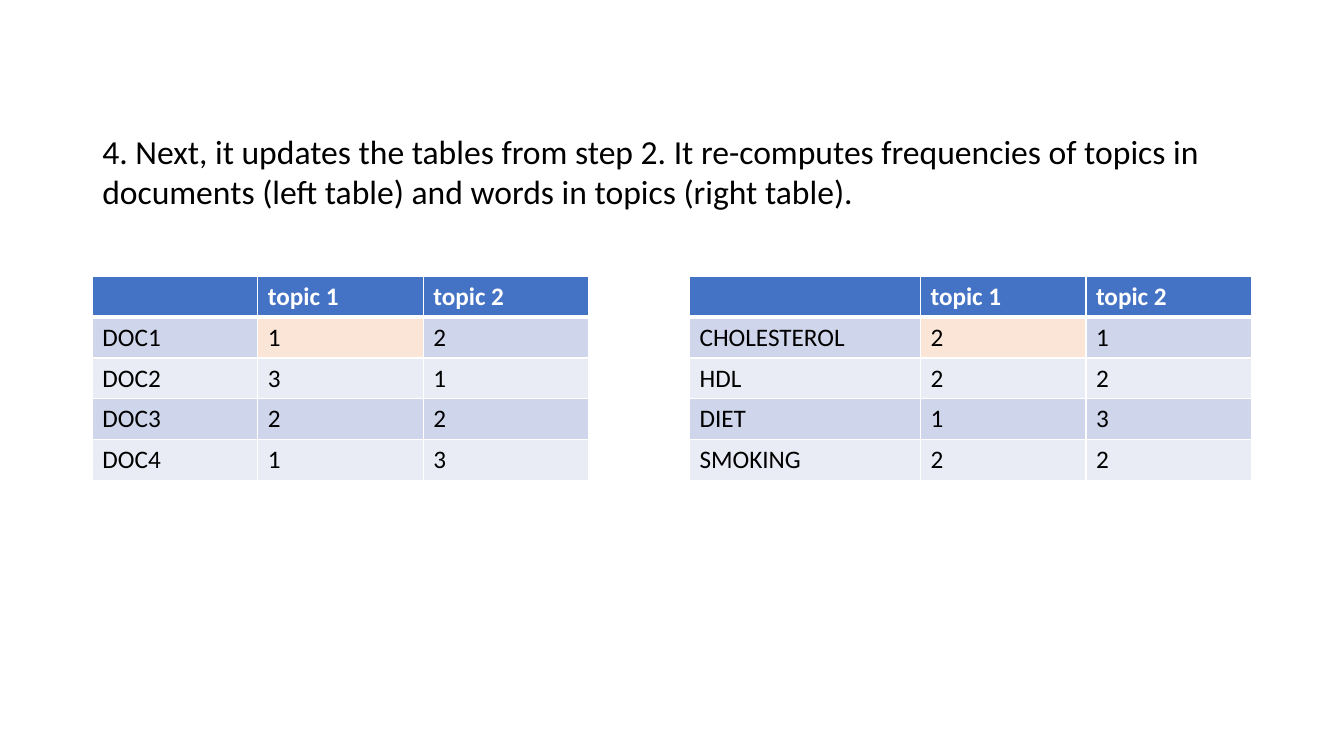
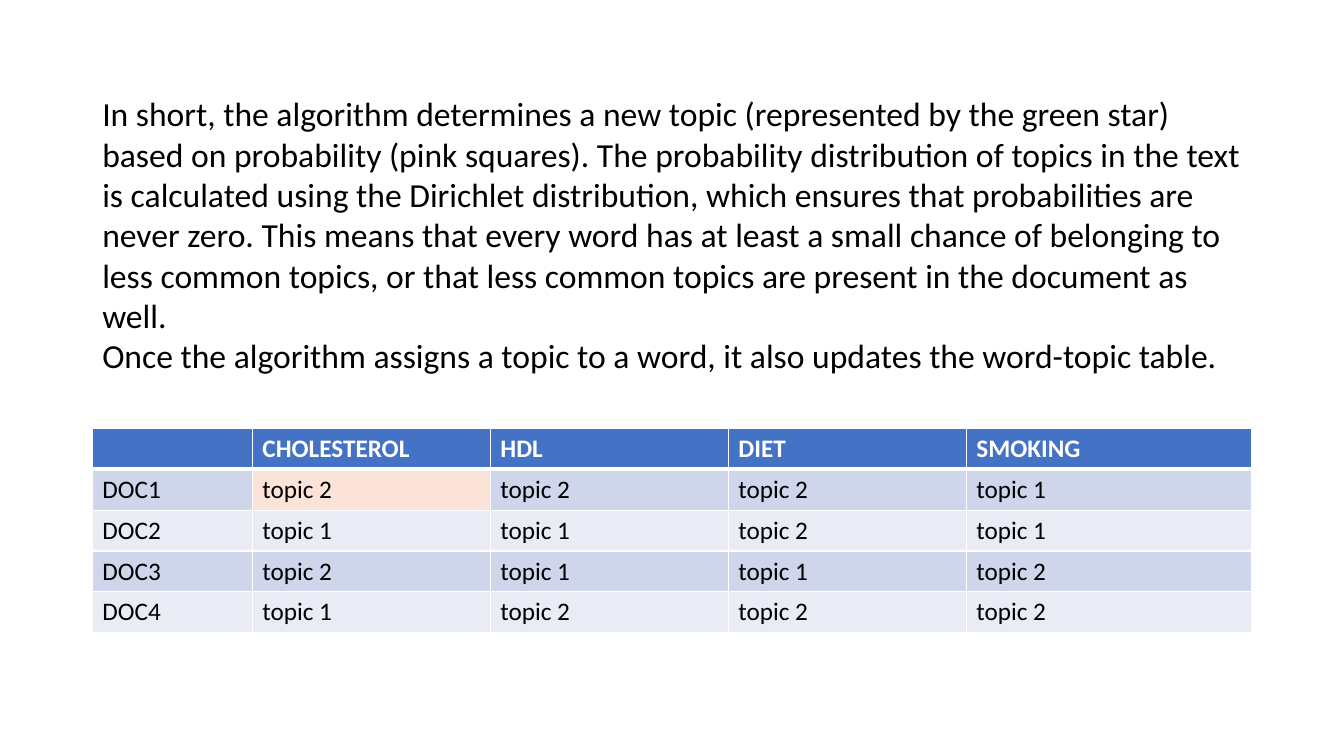
from dataclasses import dataclass
from typing import Optional

from lxml.etree import SubElement
from pptx import Presentation
from pptx.dml.color import RGBColor
from pptx.enum.text import MSO_ANCHOR as Anchor, MSO_AUTO_SIZE as AutoSize
from pptx.oxml.ns import qn
from pptx.util import Pt

# Shared look
FONT = "Calibri"
BLACK, WHITE = "000000", "FFFFFF"
HEADER = "4472C4"
BANDS = ("CFD5EA", "E9EBF5")
LEFT, WIDTH, ROW_HEIGHT = 66, 828, 29.2
BODY_SIZE, CELL_SIZE = 24, 18
THIN, THICK = 1, 3


@dataclass(frozen=True)
class TextBlock:
    top: float
    height: float
    paragraphs: tuple[str, ...]


@dataclass(frozen=True)
class TopicTable:
    top: float
    column_widths: tuple[float, ...]
    rows: tuple[tuple[Optional[str], ...], ...]  # None leaves a cell unfilled
    highlights: frozenset[tuple[int, int]]
    highlight_color: str
    value_anchor: Anchor = Anchor.TOP


@dataclass(frozen=True)
class SlideContent:
    text: TextBlock
    table: TopicTable


CONTENTS = (
    SlideContent(
        TextBlock(89.3, 65.5, (
            "4. Next, it updates the tables from step 2. It re-computes frequencies of topics "
            "in documents (left table) and words in topics (right table).",
        )),
        TopicTable(
            197.3,
            (118.2, 118.2, 118.2, 72, 165, 118.2, 118.2),
            (
                ("", "topic 1", "topic 2", None, "", "topic 1", "topic 2"),
                ("DOC1", "1", "2", None, "CHOLESTEROL", "2", "1"),
                ("DOC2", "3", "1", None, "HDL", "2", "2"),
                ("DOC3", "2", "2", None, "DIET", "1", "3"),
                ("DOC4", "1", "3", None, "SMOKING", "2", "2"),
            ),
            frozenset({(1, 1), (1, 5)}),
            "FBE5D6",
        ),
    ),
    SlideContent(
        TextBlock(61.9, 211, (
            "In short, the algorithm determines a new topic (represented by the green star) "
            "based on probability (pink squares). The probability distribution of topics in "
            "the text is calculated using the Dirichlet distribution, which ensures that "
            "probabilities are never zero. This means that every word has at least a small "
            "chance of belonging to less common topics, or that less common topics are "
            "present in the document as well.",
            "Once the algorithm assigns a topic to a word, it also updates the "
            "word-topic table.",
        )),
        TopicTable(
            306,
            (114.3, 170, 170, 170, 203.7),
            (
                ("", "CHOLESTEROL", "HDL", "DIET", "SMOKING"),
                ("DOC1", "topic 2", "topic 2", "topic 2", "topic 1"),
                ("DOC2", "topic 1", "topic 1", "topic 2", "topic 1"),
                ("DOC3", "topic 2", "topic 1", "topic 1", "topic 2"),
                ("DOC4", "topic 1", "topic 2", "topic 2", "topic 2"),
            ),
            frozenset({(1, 1)}),
            "FCE3D7",
            Anchor.MIDDLE,
        ),
    ),
)


def rgb(color: str) -> RGBColor:
    return RGBColor.from_string(color)


def write_text(paragraph, text: str, *, size: float = CELL_SIZE, color: str = BLACK,
               bold: bool = False) -> None:
    run = paragraph.add_run()
    run.text = text
    run.font.name = FONT
    run.font.size = Pt(size)
    run.font.bold = bold
    run.font.color.rgb = rgb(color)


def set_borders(cell, *, top: float = THIN, bottom: float = THIN) -> None:
    """Draw white cell borders; call before setting the fill."""
    properties = cell._tc.get_or_add_tcPr()
    for side, width in (("L", THIN), ("R", THIN), ("T", top), ("B", bottom)):
        line = SubElement(properties, qn(f"a:ln{side}"), w=str(Pt(width)))
        fill = SubElement(line, qn("a:solidFill"))
        SubElement(fill, qn("a:srgbClr"), val=WHITE)


def add_text_block(slide, block: TextBlock) -> None:
    shape = slide.shapes.add_textbox(Pt(LEFT), Pt(block.top), Pt(WIDTH), Pt(block.height))
    frame = shape.text_frame
    frame.word_wrap = True
    frame.auto_size = AutoSize.SHAPE_TO_FIT_TEXT
    frame.vertical_anchor = Anchor.MIDDLE
    for index, text in enumerate(block.paragraphs):
        paragraph = frame.add_paragraph() if index else frame.paragraphs[0]
        write_text(paragraph, text, size=BODY_SIZE)


def fill_color(content: TopicTable, row: int, column: int) -> str:
    if row == 0:
        return HEADER
    if (row, column) in content.highlights:
        return content.highlight_color
    return BANDS[(row - 1) % len(BANDS)]


def add_topic_table(slide, content: TopicTable) -> None:
    row_count = len(content.rows)
    table = slide.shapes.add_table(
        row_count, len(content.column_widths), Pt(LEFT), Pt(content.top),
        Pt(WIDTH), Pt(ROW_HEIGHT * row_count),
    ).table
    table.first_row = table.horz_banding = False
    for column, width in zip(table.columns, content.column_widths):
        column.width = Pt(width)
    for row, texts in enumerate(content.rows):
        table.rows[row].height = Pt(ROW_HEIGHT)
        is_header = row == 0
        for column, text in enumerate(texts):
            cell = table.cell(row, column)
            # The rule under the header is thick on both sides of the edge
            set_borders(cell, top=THICK if row == 1 else THIN,
                        bottom=THICK if is_header else THIN)
            if text is None:
                cell.fill.background()
                continue
            cell.fill.solid()
            cell.fill.fore_color.rgb = rgb(fill_color(content, row, column))
            if not is_header and column > 0:
                cell.vertical_anchor = content.value_anchor
            if text:
                write_text(cell.text_frame.paragraphs[0], text,
                           color=WHITE if is_header else BLACK, bold=is_header)


def main() -> None:
    presentation = Presentation()
    presentation.slide_width, presentation.slide_height = Pt(960), Pt(540)
    blank_layout = presentation.slide_layouts[6]
    for content in CONTENTS:
        slide = presentation.slides.add_slide(blank_layout)
        add_text_block(slide, content.text)
        add_topic_table(slide, content.table)
    presentation.save("out.pptx")


if __name__ == "__main__":
    main()
